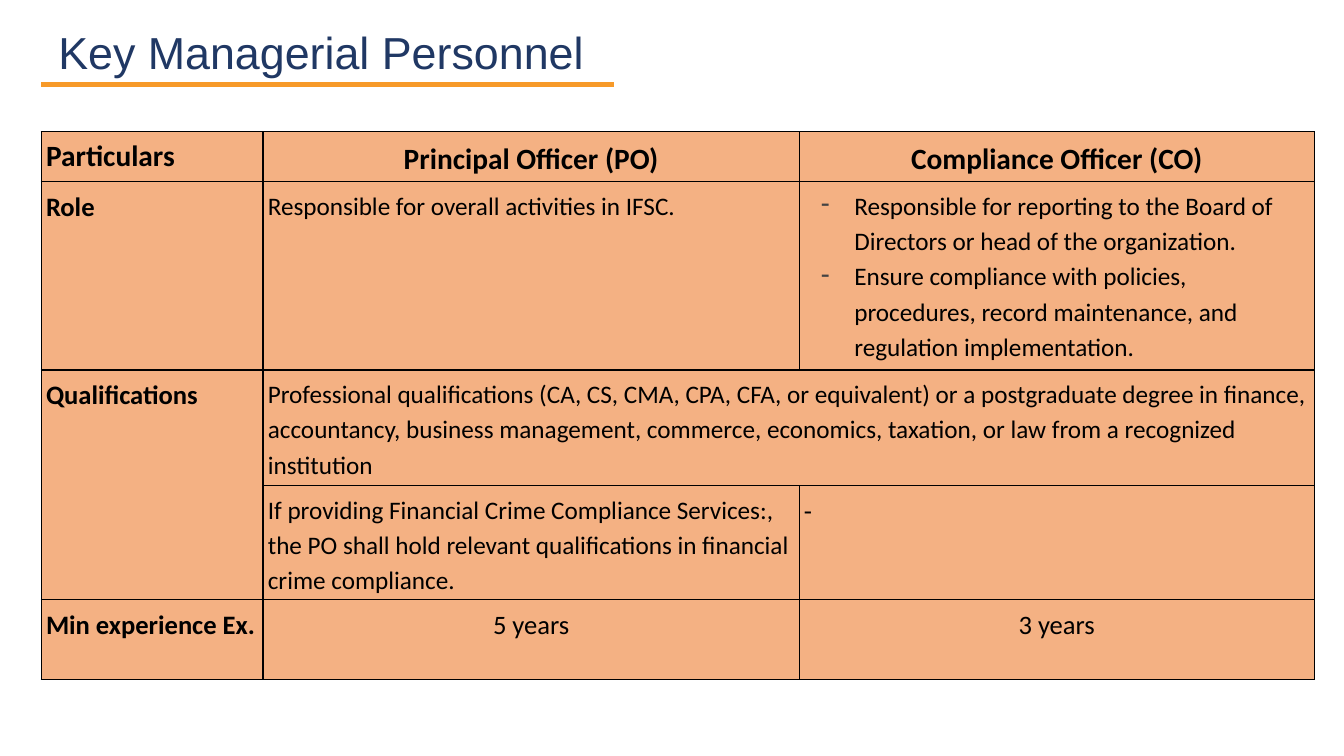
from lxml.etree import SubElement
from pptx import Presentation
from pptx.dml.color import RGBColor
from pptx.enum.shapes import MSO_CONNECTOR
from pptx.enum.text import MSO_ANCHOR, PP_ALIGN
from pptx.oxml.ns import qn
from pptx.util import Cm, Pt

NAVY, ORANGE, PEACH, BLACK, GREY = "203864", "F79A29", "F4B183", "000000", "434343"
COLUMN_WIDTHS = (5.59, 13.51, 12.98)
ROW_HEIGHTS = (1.24, 4.74, 2.92, 2.87, 2.01)

# (row, column): (paragraphs, size, bold, centred, dashed)
CONTENT = {
    (0, 0): (["Particulars"], 21, True, False, False),
    (0, 1): (["Principal Officer (PO)"], 21, True, True, False),
    (0, 2): (["Compliance Officer (CO)"], 21, True, True, False),
    (1, 0): (["Role"], 19, True, False, False),
    (1, 1): (["Responsible for overall activities in IFSC."], 18, False, False, False),
    (1, 2): (["Responsible for reporting to the Board of Directors or head of the organization.",
              "Ensure compliance with policies, procedures, record maintenance, and regulation "
              "implementation."], 18, False, False, True),
    (2, 0): (["Qualifications"], 19, True, False, False),
    (2, 1): (["Professional qualifications (CA, CS, CMA, CPA, CFA, or equivalent) or a postgraduate "
              "degree in finance, accountancy, business management, commerce, economics, taxation, "
              "or law from a recognized institution"], 18, False, False, False),
    (3, 1): (["If providing Financial Crime Compliance Services:, the PO shall hold relevant "
              "qualifications in financial crime compliance."], 18, False, False, False),
    (3, 2): (["-"], 19, False, False, False),
    (4, 0): (["Min experience Ex."], 19, True, False, False),
    (4, 1): (["5 years"], 19, False, True, False),
    (4, 2): (["3 years"], 19, False, True, False),
}


def rgb(hex_color):
    return RGBColor.from_string(hex_color)


def add_run(paragraph, text, font, size, color, bold=False):
    run = paragraph.add_run()
    run.text = text
    run.font.name = font
    run.font.size = Pt(size)
    run.font.bold = bold
    run.font.color.rgb = rgb(color)


def set_margins(holder, margin):
    holder.margin_left = holder.margin_right = margin
    holder.margin_top = holder.margin_bottom = margin


def add_dash(paragraph):
    props = paragraph._p.get_or_add_pPr()
    props.set("marL", str(Cm(1.27)))
    props.set("indent", str(-Cm(0.84)))
    color = SubElement(props, qn("a:buClr"))
    SubElement(color, qn("a:srgbClr"), val=GREY)
    SubElement(props, qn("a:buChar"), char="-")


def add_borders(cell):
    props = cell._tc.get_or_add_tcPr()
    for position, side in enumerate(("a:lnL", "a:lnR", "a:lnT", "a:lnB")):
        border = SubElement(props, qn(side), w=str(Pt(1)))
        fill = SubElement(border, qn("a:solidFill"))
        SubElement(fill, qn("a:srgbClr"), val=BLACK)
        props.insert(position, border)  # borders come before the fill


def add_heading(slide, left, top, width, height):
    box = slide.shapes.add_textbox(left, top, width, height)
    frame = box.text_frame
    frame.word_wrap = True
    frame.vertical_anchor = MSO_ANCHOR.BOTTOM
    set_margins(frame, Cm(0.33))
    add_run(frame.paragraphs[0], "Key Managerial Personnel", "Arial", 32, NAVY)

    # Underline
    line_left, line_top = left - Cm(0.1), top + Cm(1.88)
    underline = slide.shapes.add_connector(
        MSO_CONNECTOR.STRAIGHT, line_left, line_top, line_left + Cm(14.43), line_top)
    underline.line.color.rgb = rgb(ORANGE)
    underline.line.width = Pt(3)
    SubElement(underline._element.spPr, qn("a:effectLst"))


def fill_cell(cell, paragraphs, size, bold, centred, dashed):
    frame = cell.text_frame
    for index, text in enumerate(paragraphs):
        paragraph = frame.add_paragraph() if index else frame.paragraphs[0]
        paragraph.alignment = PP_ALIGN.CENTER if centred else PP_ALIGN.LEFT
        paragraph.line_spacing = 1.0 if text == "Particulars" else 1.15
        if dashed:
            add_dash(paragraph)
        add_run(paragraph, text, "Calibri", size, BLACK, bold)


def add_officer_table(slide, left, top, width, height):
    table = slide.shapes.add_table(
        len(ROW_HEIGHTS), len(COLUMN_WIDTHS), left, top, width, height).table
    for column, share in zip(table.columns, COLUMN_WIDTHS):
        column.width = int(width * share / sum(COLUMN_WIDTHS))
    for row, share in zip(table.rows, ROW_HEIGHTS):
        row.height = int(height * share / sum(ROW_HEIGHTS))

    # Cell look
    for row_index, row in enumerate(table.rows):
        for cell in row.cells:
            cell.fill.solid()
            cell.fill.fore_color.rgb = rgb(PEACH)
            cell.vertical_anchor = MSO_ANCHOR.TOP if row_index else MSO_ANCHOR.MIDDLE
            set_margins(cell, Cm(0.12))
            add_borders(cell)

    # Qualifications spans two rows, the shared requirement two columns
    table.cell(2, 0).merge(table.cell(3, 0))
    table.cell(2, 1).merge(table.cell(2, 2))
    for (row_index, column_index), content in CONTENT.items():
        fill_cell(table.cell(row_index, column_index), *content)


def main():
    deck = Presentation()
    deck.slide_width, deck.slide_height = Cm(33.87), Cm(19.05)
    slide = deck.slides.add_slide(deck.slide_layouts[6])
    add_heading(slide, Cm(1.14), Cm(0.25), Cm(31.55), Cm(2.06))
    add_officer_table(slide, Cm(1.04), Cm(3.32), Cm(sum(COLUMN_WIDTHS)), Cm(sum(ROW_HEIGHTS)))
    deck.save("out.pptx")


if __name__ == "__main__":
    main()
